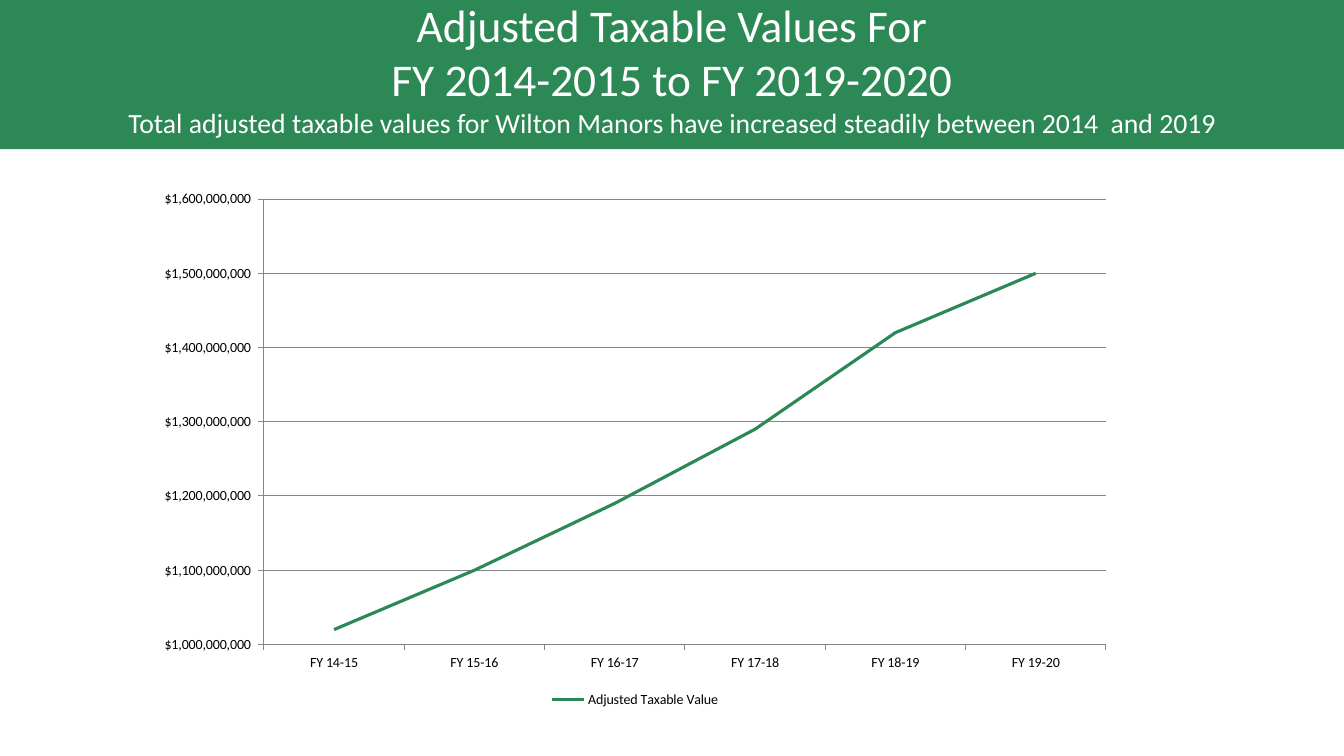
from pptx import Presentation
from pptx.chart.data import CategoryChartData
from pptx.dml.color import RGBColor
from pptx.enum.chart import XL_CHART_TYPE, XL_LEGEND_POSITION, XL_MARKER_STYLE, XL_TICK_MARK
from pptx.enum.text import MSO_ANCHOR, MSO_AUTO_SIZE, PP_ALIGN
from pptx.util import Pt

LINE_CHART = XL_CHART_TYPE.LINE
LEGEND_BOTTOM = XL_LEGEND_POSITION.BOTTOM
NO_MARKER = XL_MARKER_STYLE.NONE
TICK_OUTSIDE = XL_TICK_MARK.OUTSIDE
MIDDLE = MSO_ANCHOR.MIDDLE
NO_AUTOFIT = MSO_AUTO_SIZE.NONE
CENTER = PP_ALIGN.CENTER

TITLE_ONLY = 5
SLIDE_WIDTH = 960
COLORS = {"green": "2C8855", "white": "FFFFFF", "black": "000000", "gray": "868686"}


def color(name):
    return RGBColor.from_string(COLORS[name])


class SlideBuilder:
    font_name = "Calibri"

    def __init__(self, presentation):
        self.slide = presentation.slides.add_slide(presentation.slide_layouts[TITLE_ONLY])

    def place(self, shape, box):
        shape.left, shape.top, shape.width, shape.height = (Pt(value) for value in box)

    def style_font(self, font, size, color_name):
        font.name = self.font_name
        font.size = Pt(size)
        font.color.rgb = color(color_name)

    def title_banner(self, box, lines):
        title = self.slide.shapes.title
        self.place(title, box)
        title.fill.solid()
        title.fill.fore_color.rgb = color("green")
        text_frame = title.text_frame
        text_frame.word_wrap = True
        text_frame.auto_size = NO_AUTOFIT
        text_frame.vertical_anchor = MIDDLE
        text_frame.margin_top, text_frame.margin_bottom = Pt(0), Pt(6)
        text_frame.text = "\n".join(text for text, size in lines)
        for paragraph, (text, size) in zip(text_frame.paragraphs, lines):
            paragraph.alignment = CENTER
            paragraph.line_spacing = 1.0
            paragraph.space_before = Pt(0)
            self.style_font(paragraph.runs[0].font, size, "white")

    def line_chart(self, box, categories, name, values):
        data = CategoryChartData()
        data.categories = categories
        data.add_series(name, values)
        frame = self.slide.shapes.add_chart(LINE_CHART, *(Pt(value) for value in box), data)
        chart = frame.chart
        self.style_font(chart.font, 10, "black")
        chart.has_title = False
        chart.has_legend = True
        chart.legend.position = LEGEND_BOTTOM
        chart.legend.include_in_layout = False

        # Series
        plot = chart.plots[0]
        plot.vary_by_categories = False
        series = plot.series[0]
        series.smooth = False
        series.marker.style = NO_MARKER
        series.format.line.color.rgb = color("green")
        series.format.line.width = Pt(2.25)

        # Axes
        value_axis = chart.value_axis
        value_axis.minimum_scale = 1_000_000_000
        value_axis.maximum_scale = 1_600_000_000
        value_axis.major_unit = 100_000_000
        value_axis.has_major_gridlines = True
        value_axis.tick_labels.number_format = '"$"#,##0_);\\("$"#,##0\\)'
        value_axis.tick_labels.number_format_is_linked = False
        for axis in (chart.category_axis, value_axis):
            axis.major_tick_mark = TICK_OUTSIDE
        for part in (chart.category_axis, value_axis, value_axis.major_gridlines):
            part.format.line.color.rgb = color("gray")
            part.format.line.width = Pt(0.75)


def main():
    presentation = Presentation()
    presentation.slide_width, presentation.slide_height = Pt(SLIDE_WIDTH), Pt(540)
    builder = SlideBuilder(presentation)

    # Title banner
    builder.title_banner((0, -3, SLIDE_WIDTH, 109.5), [
        ("Adjusted Taxable Values For", 32.4),
        ("FY 2014-2015 to FY 2019-2020", 32.4),
        ("Total adjusted taxable values for Wilton Manors have increased steadily "
         "between 2014  and 2019", 19.8),
    ])

    # Taxable values by fiscal year
    builder.line_chart(
        (103.5, 129, 700.5, 379.5),
        [f"FY {year}-{year + 1}" for year in range(14, 20)],
        "Adjusted Taxable Value",
        [1_020_000_000, 1_100_000_000, 1_190_000_000,
         1_290_000_000, 1_420_000_000, 1_500_000_000],
    )

    presentation.save("out.pptx")


if __name__ == "__main__":
    main()
